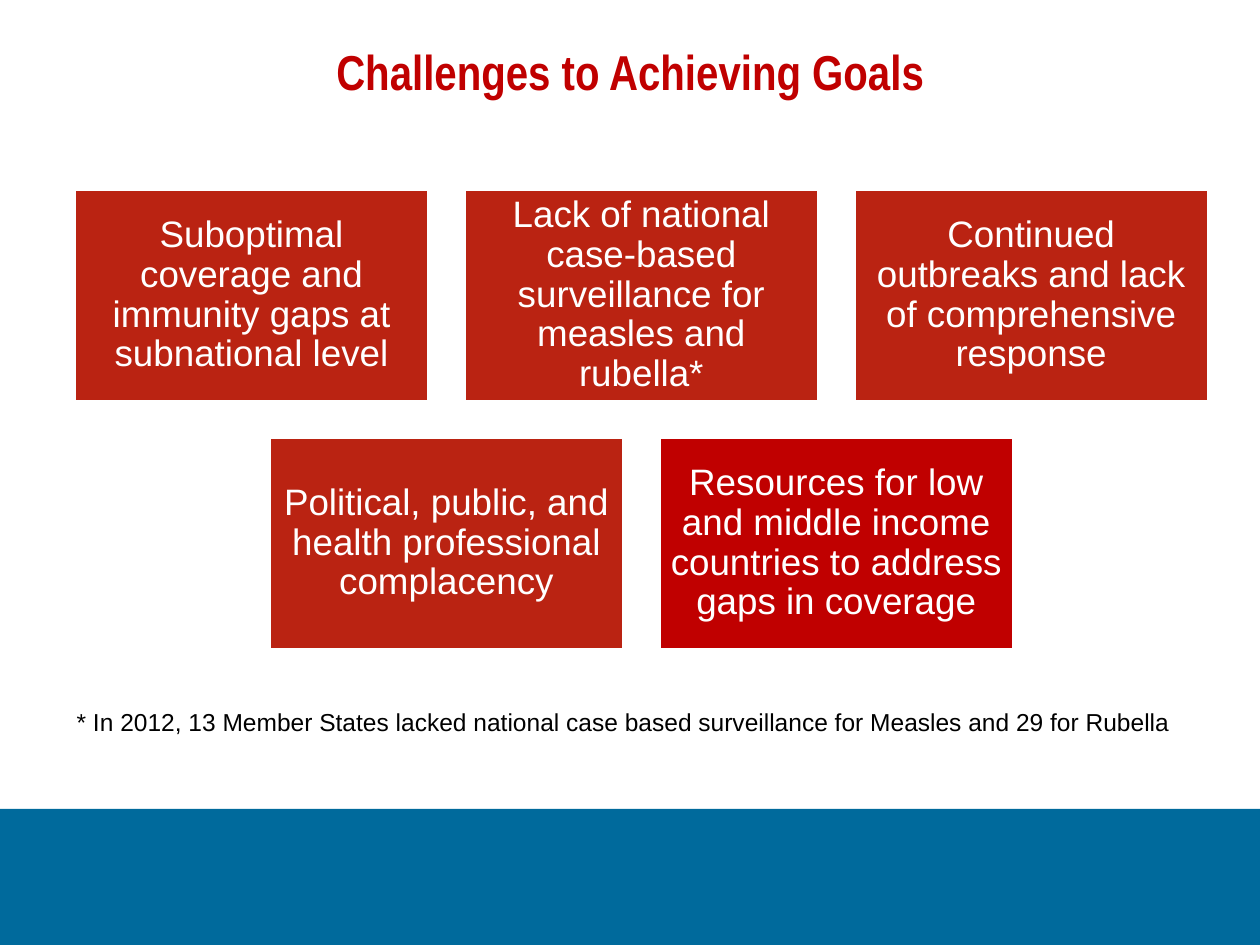
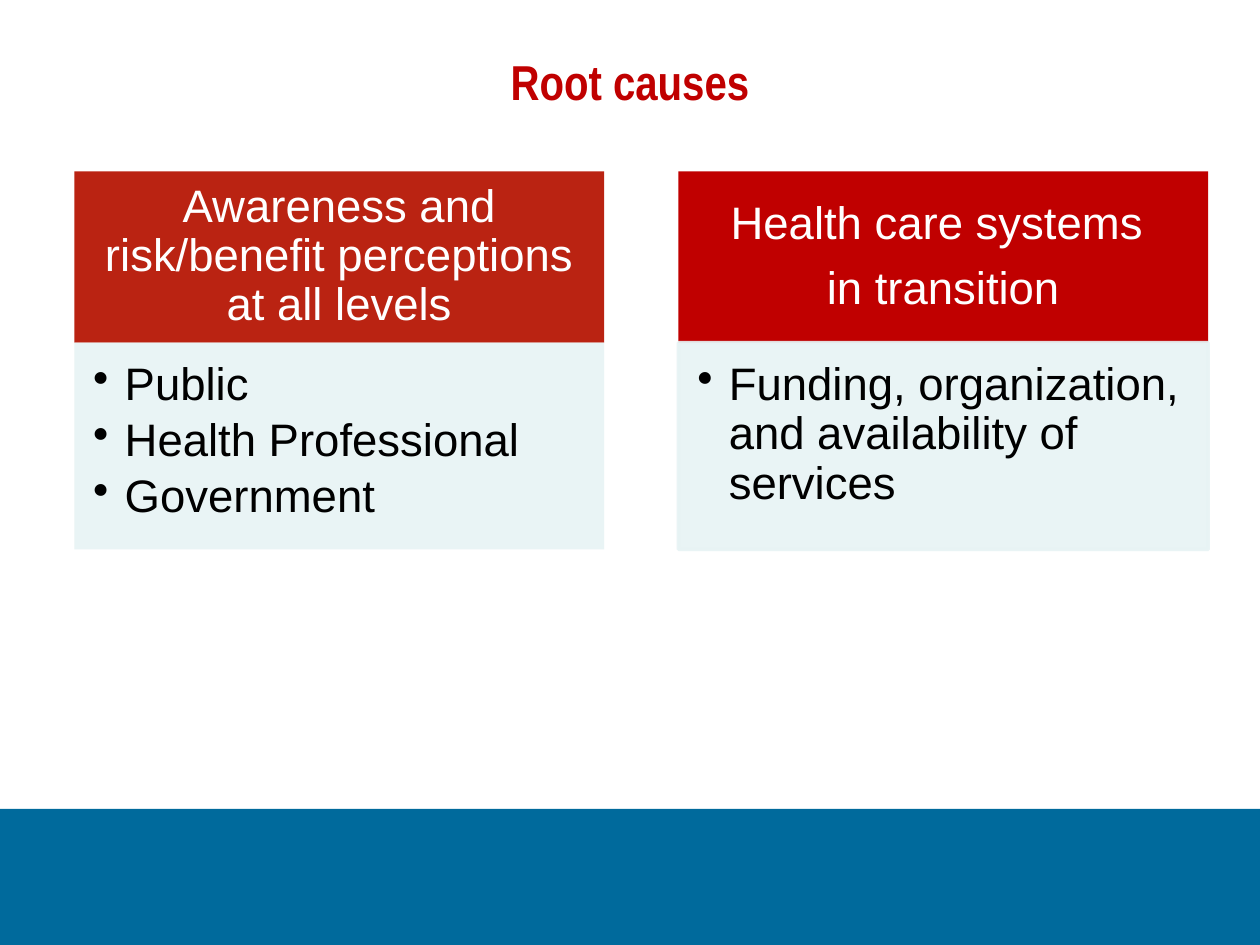
from dataclasses import dataclass

from lxml import etree
from pptx import Presentation
from pptx import util as u
from pptx.dml.color import RGBColor
from pptx.enum import shapes, text
from pptx.oxml import ns

# Shared look
WIDTH, HEIGHT = 10, 7.5
BLUE = RGBColor(0x00, 0x6A, 0x9C)
CRIMSON = RGBColor(0xC0, 0x00, 0x00)
BRICK = RGBColor(0xBA, 0x23, 0x12)
PALE = RGBColor(0xE7, 0xF3, 0xF4)
WHITE = RGBColor(0xFF, 0xFF, 0xFF)
BLACK = RGBColor(0x00, 0x00, 0x00)
BODY_FONT, TITLE_FONT = "Arial", "Arial Narrow"
BAND_TOP = 6.42
GRID_LEFT, GRID_WIDTH = 0.59, 9.0
CENTER, LEFT = text.PP_ALIGN.CENTER, text.PP_ALIGN.LEFT
MIDDLE, TOP = text.MSO_ANCHOR.MIDDLE, text.MSO_ANCHOR.TOP


@dataclass(frozen=True)
class Area:
    left: float
    top: float
    width: float
    height: float

    def lengths(self) -> list:
        return [u.Inches(v) for v in (self.left, self.top, self.width, self.height)]


@dataclass(frozen=True)
class Card:
    label: str
    fill: RGBColor = BRICK


@dataclass(frozen=True)
class Cause:
    heading: tuple
    points: tuple
    fill: RGBColor
    outlined: bool = False


CHALLENGE_ROWS = (
    (Card("Suboptimal coverage and immunity gaps at subnational level"),
     Card("Lack of national case-based surveillance for measles and rubella*"),
     Card("Continued outbreaks and lack of comprehensive response")),
    (Card("Political, public, and health professional complacency"),
     Card("Resources for low and middle income countries to address gaps in coverage",
          CRIMSON)),
)
CAUSES = (
    Cause(("Awareness and risk/benefit perceptions at all levels",),
          ("Public", "Health Professional", "Government"), BRICK),
    Cause(("Health care systems ", "in transition"),
          ("Funding, organization, and availability of services",), CRIMSON, True),
)


def write(box, lines, *, size, color, font=BODY_FONT, bold=False, align=CENTER,
          anchor=MIDDLE, insets=(0.1, 0.05, 0.1, 0.05), spacing=1.0, after=0.0,
          bullet_indent=0.0) -> None:
    """Fill a box with paragraphs; after is a share of the text size."""
    frame = box.text_frame
    frame.word_wrap = True
    frame.vertical_anchor = anchor
    (frame.margin_left, frame.margin_top,
     frame.margin_right, frame.margin_bottom) = map(u.Inches, insets)
    for index, line in enumerate(lines):
        para = frame.paragraphs[0] if index == 0 else frame.add_paragraph()
        para.alignment = align
        para.line_spacing = spacing
        para.space_after = u.Pt(size * after)
        if bullet_indent:
            props = para._p.get_or_add_pPr()
            props.set("marL", str(u.Inches(bullet_indent)))
            props.set("indent", str(-u.Inches(bullet_indent)))
            etree.SubElement(props, ns.qn("a:buChar")).set("char", "•")
        span = para.add_run()
        span.text = line
        span.font.name, span.font.size, span.font.bold = font, u.Pt(size), bold
        span.font.color.rgb = color


def add_block(page, area: Area, fill: RGBColor, line=None, opacity=100):
    """Add a flat rectangle with an optional 2 pt outline."""
    block = page.shapes.add_shape(shapes.MSO_SHAPE.RECTANGLE, *area.lengths())
    block.shadow.inherit = False
    block.fill.solid()
    block.fill.fore_color.rgb = fill
    if line is None:
        block.line.fill.background()
    else:
        block.line.color.rgb = line
        block.line.width = u.Pt(2)
    if opacity < 100:
        for color in block._element.spPr.iter(ns.qn("a:srgbClr")):
            etree.SubElement(color, ns.qn("a:alpha")).set("val", str(opacity * 1000))
    return block


def add_text(page, area: Area, line: str, **style) -> None:
    write(page.shapes.add_textbox(*area.lengths()), [line], **style)


def add_page(deck, title: str, title_height: float):
    """Start a page with the bottom band and the centred title."""
    page = deck.slides.add_slide(deck.slide_layouts[6])
    add_block(page, Area(0, BAND_TOP, WIDTH, HEIGHT - BAND_TOP), BLUE)
    add_text(page, Area(0, 0.21, WIDTH, title_height), title,
             size=28, color=CRIMSON, font=TITLE_FONT, bold=True)
    return page


def build_challenges(deck) -> None:
    page = add_page(deck, "Challenges to Achieving Goals", 0.71)
    # Three columns, gaps of a tenth of a card, shorter rows centred
    columns = len(CHALLENGE_ROWS[0])
    width = GRID_WIDTH / (columns + 0.1 * (columns - 1))
    height, gap = 0.6 * width, 0.1 * width
    for row, cards in enumerate(CHALLENGE_ROWS):
        start = GRID_LEFT + (columns - len(cards)) * (width + gap) / 2
        for column, card in enumerate(cards):
            area = Area(start + column * (width + gap), 1.5 + row * (height + gap),
                        width, height)
            write(add_block(page, area, card.fill, WHITE), [card.label], size=21,
                  color=WHITE, insets=(0.09,) * 4, spacing=0.9, after=0.35)
    # Footnote
    add_text(page, Area(0.51, 5.56, 9.08, 0.34),
             "* In 2012, 13 Member States lacked national case based surveillance "
             "for Measles and 29 for Rubella",
             size=14, color=BLACK, align=LEFT, anchor=TOP)


def build_causes(deck) -> None:
    page = add_page(deck, "Root causes", 0.87)
    # Two columns, each a heading over a list
    width = GRID_WIDTH / 2.14
    top, heading_height, list_height = 1.36, 1.36, 1.64
    for column, cause in enumerate(CAUSES):
        left = GRID_LEFT + column * 1.14 * width
        heading = add_block(page, Area(left, top, width, heading_height), cause.fill)
        write(heading, cause.heading, size=26, color=WHITE,
              insets=(0.2, 0.12, 0.2, 0.12), spacing=0.9, after=0.35)
        points = add_block(page, Area(left, top + heading_height, width, list_height),
                           PALE, PALE if cause.outlined else None, opacity=90)
        write(points, cause.points, size=26, color=BLACK, align=LEFT, anchor=TOP,
              insets=(0.15, 0.15, 0.2, 0.23), spacing=0.9, after=0.15,
              bullet_indent=0.25)


def main() -> None:
    deck = Presentation()
    deck.slide_width, deck.slide_height = u.Inches(WIDTH), u.Inches(HEIGHT)
    build_challenges(deck)
    build_causes(deck)
    deck.save("out.pptx")


if __name__ == "__main__":
    main()
